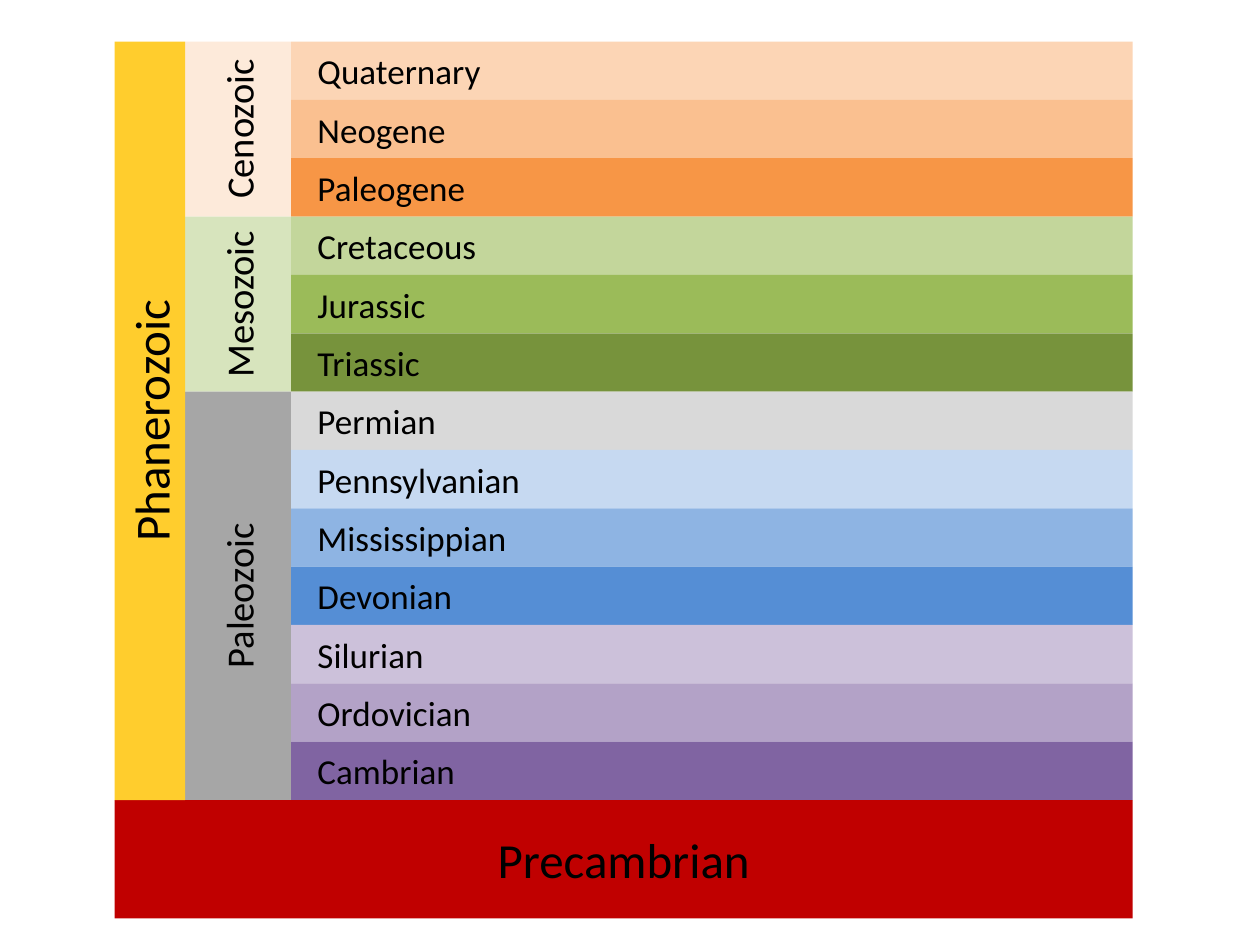
import pptx
import pptx.dml.color
import pptx.enum.shapes
import pptx.enum.text
import pptx.util

RGB = pptx.dml.color.RGBColor
ALIGN = pptx.enum.text.PP_ALIGN
Inches = pptx.util.Inches

BLACK = RGB(0x00, 0x00, 0x00)
EON_YELLOW = RGB(0xFF, 0xCD, 0x2D)
PRECAMBRIAN_RED = RGB(0xC0, 0x00, 0x00)
CENOZOIC_PEACH = RGB(0xFD, 0xEA, 0xDA)
MESOZOIC_GREEN = RGB(0xD7, 0xE4, 0xBD)
PALEOZOIC_GREY = RGB(0xA6, 0xA6, 0xA6)

# Each era with its colour and its periods, youngest first
ERAS = [
    ("Cenozoic", CENOZOIC_PEACH, [
        ("Quaternary", RGB(0xFC, 0xD5, 0xB5)),
        ("Neogene", RGB(0xFA, 0xC0, 0x90)),
        ("Paleogene", RGB(0xF7, 0x96, 0x46)),
    ]),
    ("Mesozoic", MESOZOIC_GREEN, [
        ("Cretaceous", RGB(0xC3, 0xD6, 0x9B)),
        ("Jurassic", RGB(0x9B, 0xBB, 0x59)),
        ("Triassic", RGB(0x77, 0x93, 0x3C)),
    ]),
    ("Paleozoic", PALEOZOIC_GREY, [
        ("Permian", RGB(0xD9, 0xD9, 0xD9)),
        ("Pennsylvanian", RGB(0xC6, 0xD9, 0xF1)),
        ("Mississippian", RGB(0x8E, 0xB4, 0xE3)),
        ("Devonian", RGB(0x55, 0x8E, 0xD5)),
        ("Silurian", RGB(0xCC, 0xC1, 0xDA)),
        ("Ordovician", RGB(0xB3, 0xA2, 0xC7)),
        ("Cambrian", RGB(0x80, 0x64, 0xA2)),
    ]),
]

# Grid in inches: column edges, then the rows shared by all periods
EON_LEFT, ERA_LEFT, PERIOD_LEFT, RIGHT = 0.91, 1.47, 2.31, 8.99
TOP, PRECAMBRIAN_TOP, BOTTOM = 0.33, 6.35, 7.29
PERIOD_COUNT = sum(len(periods) for _, _, periods in ERAS)
ROW_HEIGHT = (PRECAMBRIAN_TOP - TOP) / PERIOD_COUNT
PERIOD_INDENT = 0.21


def row_top(row):
    return TOP + row * ROW_HEIGHT


def add_band(slide, label, color, left, top, right, bottom, size,
             align=ALIGN.CENTER):
    """Add a labelled rectangle that spans the given edges."""
    band = slide.shapes.add_shape(
        pptx.enum.shapes.MSO_SHAPE.RECTANGLE, Inches(left), Inches(top),
        Inches(right - left), Inches(bottom - top))
    band.shadow.inherit = False
    band.fill.solid()
    band.fill.fore_color.rgb = color
    band.line.fill.background()
    band.text_frame.vertical_anchor = pptx.enum.text.MSO_ANCHOR.MIDDLE
    paragraph = band.text_frame.paragraphs[0]
    paragraph.alignment = align
    run = paragraph.add_run()
    run.text = label
    font_format = {"name": "Calibri", "size": pptx.util.Pt(size)}
    for attribute, value in font_format.items():
        setattr(run.font, attribute, value)
    run.font.color.rgb = BLACK
    return band


def add_upright_band(slide, label, color, left, top, right, bottom, size):
    """Add a band turned so that its label reads from bottom to top."""
    middle_x, middle_y = (left + right) / 2, (top + bottom) / 2
    half_length, half_depth = (bottom - top) / 2, (right - left) / 2
    band = add_band(slide, label, color,
                    middle_x - half_length, middle_y - half_depth,
                    middle_x + half_length, middle_y + half_depth, size)
    band.rotation = 270


def add_period(slide, label, color, row):
    band = add_band(slide, label, color, PERIOD_LEFT, row_top(row),
                    RIGHT, row_top(row + 1), 20, ALIGN.LEFT)
    band.text_frame.margin_left = Inches(PERIOD_INDENT)


def add_era(slide, label, color, first_row, periods):
    end_row = first_row + len(periods)
    for row, (period, period_color) in enumerate(periods, first_row):
        add_period(slide, period, period_color, row)
    add_upright_band(slide, label, color, ERA_LEFT, row_top(first_row),
                     PERIOD_LEFT, row_top(end_row), 22)
    return end_row


def main():
    presentation = pptx.Presentation()
    presentation.slide_width = Inches(10)
    presentation.slide_height = Inches(7.5)
    slide = presentation.slides.add_slide(presentation.slide_layouts[6])

    next_row = 0
    for era, color, periods in ERAS:
        next_row = add_era(slide, era, color, next_row, periods)
    add_band(slide, "Precambrian", PRECAMBRIAN_RED, EON_LEFT,
             PRECAMBRIAN_TOP, RIGHT, BOTTOM, 28)
    add_upright_band(slide, "Phanerozoic", EON_YELLOW, EON_LEFT, TOP,
                     ERA_LEFT, PRECAMBRIAN_TOP, 28)

    presentation.save("out.pptx")


if __name__ == "__main__":
    main()
